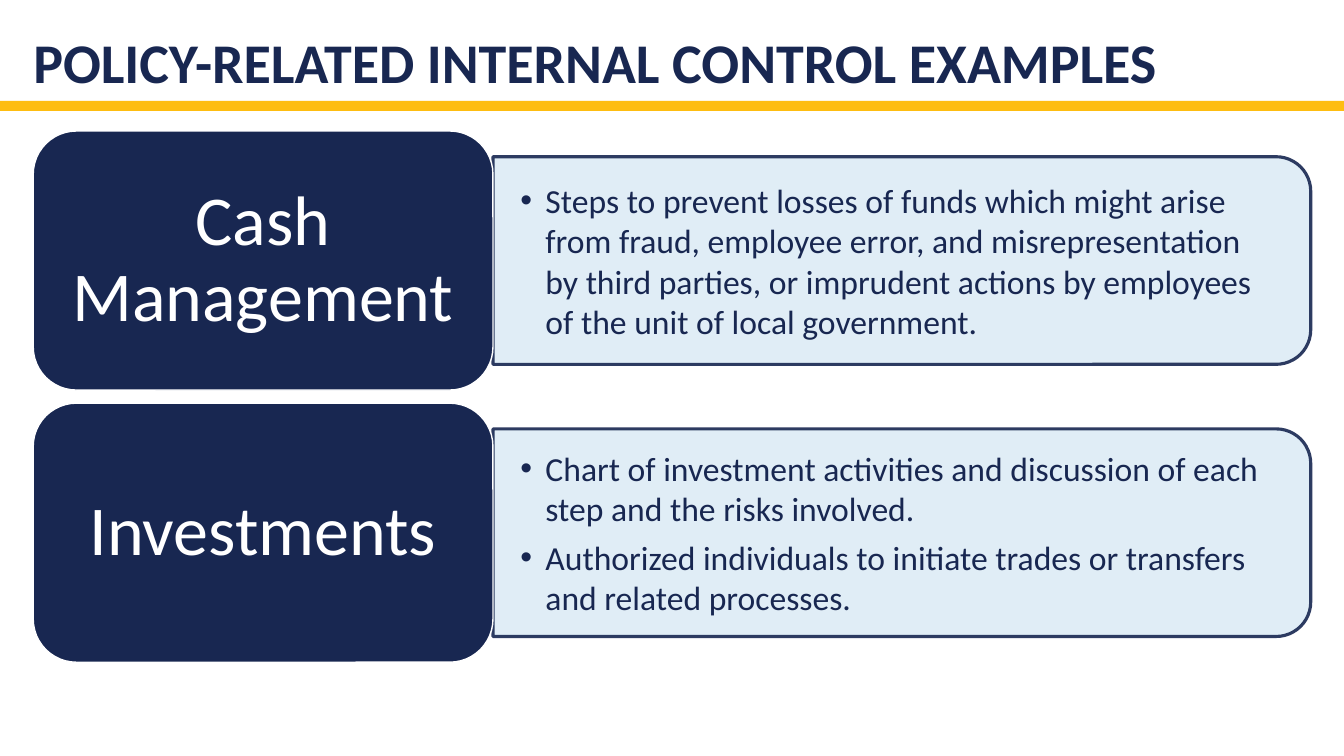
import pptx
import pptx.util
import pptx.dml.color
import pptx.enum.shapes
import pptx.enum.text
import pptx.oxml.ns
from lxml import etree

Inches = pptx.util.Inches
Pt = pptx.util.Pt
RGBColor = pptx.dml.color.RGBColor
SHAPE = pptx.enum.shapes.MSO_SHAPE
ANCHOR = pptx.enum.text.MSO_ANCHOR
ALIGN = pptx.enum.text.PP_ALIGN
qn = pptx.oxml.ns.qn

NAVY = RGBColor(0x18, 0x27, 0x51)
GOLD = RGBColor(0xFE, 0xBD, 0x11)
PALE = RGBColor(0xDD, 0xEC, 0xF6)
WHITE = RGBColor(0xFF, 0xFF, 0xFF)

LEFT, TOP, PITCH = 0.33, 1.3, 2.7
LABEL_W, LABEL_H = 4.56, 2.57
PANEL_W, PANEL_H = 8.11, 2.06
TEXT_W, TEXT_H = 8.01, 1.86

TOPICS = [
    ("Cash Management", [
        "Steps to prevent losses of funds which might arise from fraud, "
        "employee error, and misrepresentation by third parties, or "
        "imprudent actions by employees of the unit of local government.",
    ]),
    ("Investments", [
        "Chart of investment activities and discussion of each step and "
        "the risks involved.",
        "Authorized individuals to initiate trades or transfers and "
        "related processes.",
    ]),
]


def set_frame(frame, anchor, side, edge):
    frame.word_wrap = True
    frame.auto_size = pptx.enum.text.MSO_AUTO_SIZE.NONE
    frame.vertical_anchor = anchor
    frame.margin_left = frame.margin_right = Inches(side)
    frame.margin_top = frame.margin_bottom = Inches(edge)


def set_font(para, size, color, bold=False):
    for run in para.runs:
        run.font.name = "Calibri"
        run.font.size = Pt(size)
        run.font.color.rgb = color
        run.font.bold = bold


def add_block(slide, kind, box, fill, line=None, width=0):
    shape = slide.shapes.add_shape(kind, *map(Inches, box))
    shape.shadow.inherit = False
    shape.fill.solid()
    shape.fill.fore_color.rgb = fill
    if line is None:
        shape.line.fill.background()
    else:
        shape.line.color.rgb = line
        shape.line.width = Pt(width)
    return shape


def add_title(slide, text):
    title = slide.shapes.title
    title.left, title.top = Inches(LEFT), Inches(0)
    title.width, title.height = Inches(12.67), Inches(1)
    set_frame(title.text_frame, ANCHOR.BOTTOM, 0, 0.05)
    title.text_frame.text = text
    para = title.text_frame.paragraphs[0]
    para.alignment = ALIGN.LEFT
    para.line_spacing = 0.9
    set_font(para, 40, NAVY, True)


def add_panel(slide, mid):
    """Draw the pale panel, turned so its round corners face right."""
    center = LEFT + LABEL_W + PANEL_W / 2
    box = (center - PANEL_H / 2, mid - PANEL_W / 2, PANEL_H, PANEL_W)
    panel = add_block(slide, SHAPE.ROUND_2_SAME_RECTANGLE, box,
                      PALE, NAVY, 2.25)
    panel.rotation = 90
    for color in panel._element.spPr.iter(qn("a:srgbClr")):
        etree.SubElement(color, qn("a:alpha"), val="90000")


def add_bullets(slide, mid, lines):
    box = (LEFT + LABEL_W, mid - TEXT_H / 2, TEXT_W, TEXT_H)
    frame = slide.shapes.add_textbox(*map(Inches, box)).text_frame
    set_frame(frame, ANCHOR.MIDDLE, 0.27, 0.14)
    frame.text = "\n".join(lines)
    for para in frame.paragraphs:
        para.space_after = Pt(6)
        props = para._p.get_or_add_pPr()
        props.set("marL", str(Inches(0.25)))
        props.set("indent", str(-Inches(0.25)))
        etree.SubElement(props, qn("a:buFont"), typeface="Arial")
        etree.SubElement(props, qn("a:buChar"), char="•")
        set_font(para, 24, NAVY)


def add_label(slide, mid, text):
    box = (LEFT, mid - LABEL_H / 2, LABEL_W, LABEL_H)
    label = add_block(slide, SHAPE.ROUNDED_RECTANGLE, box, NAVY, WHITE, 1)
    set_frame(label.text_frame, ANCHOR.MIDDLE, 0.21, 0.1)
    label.text_frame.text = text
    para = label.text_frame.paragraphs[0]
    para.alignment = ALIGN.CENTER
    para.line_spacing = 0.9
    set_font(para, 50, WHITE)


def main():
    deck = pptx.Presentation()
    deck.slide_width, deck.slide_height = Inches(13.33), Inches(7.5)
    slide = deck.slides.add_slide(deck.slide_layouts[5])
    add_block(slide, SHAPE.RECTANGLE, (0, 1, 13.33, 0.1), GOLD)
    add_title(slide, "POLICY-RELATED INTERNAL CONTROL EXAMPLES")
    for row, (name, lines) in enumerate(TOPICS):
        mid = TOP + LABEL_H / 2 + row * PITCH
        add_panel(slide, mid)
        add_bullets(slide, mid, lines)
        add_label(slide, mid, name)
    deck.save("out.pptx")


if __name__ == "__main__":
    main()
